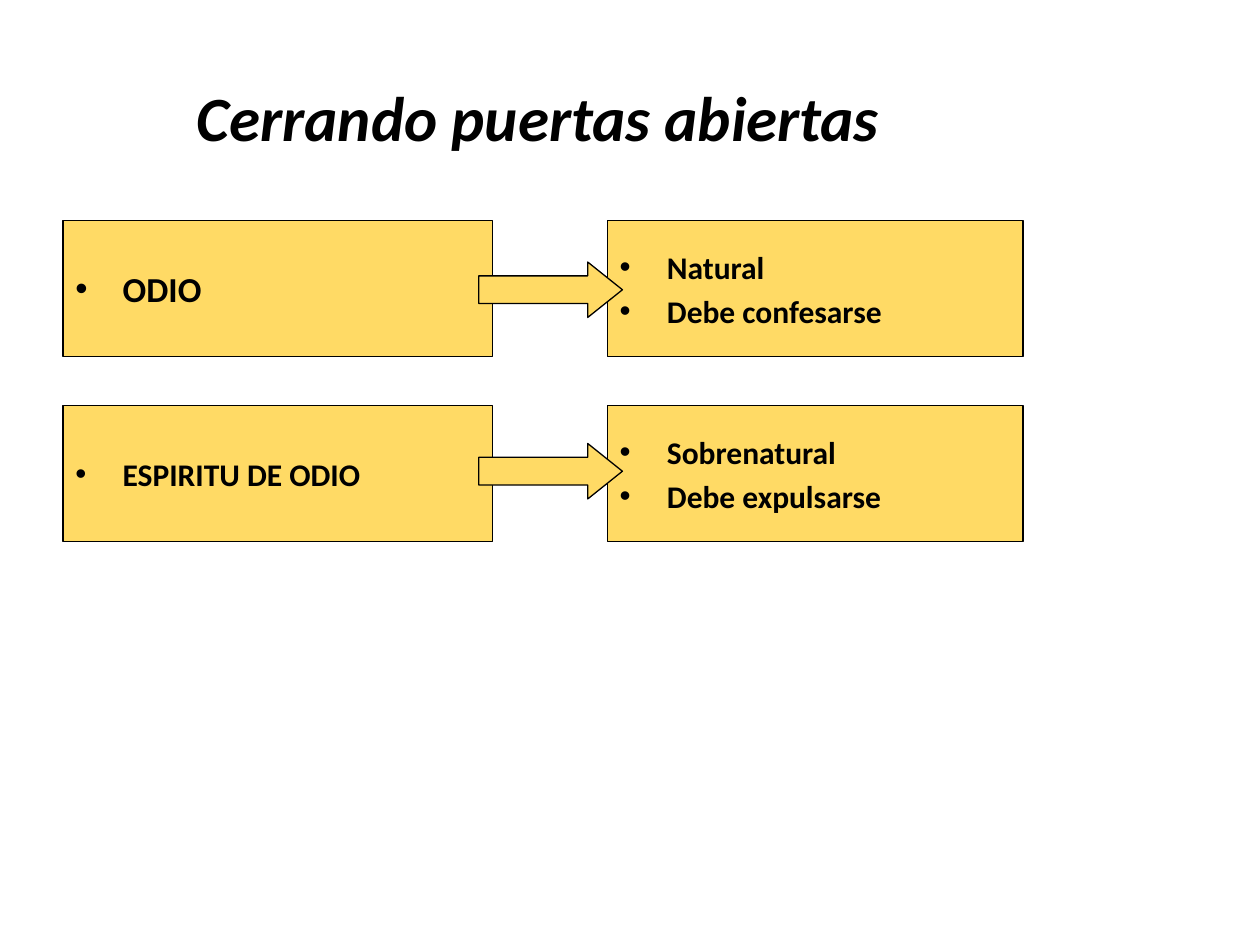
from dataclasses import dataclass

import pptx
import pptx.dml.color
import pptx.enum.shapes
import pptx.enum.text
import pptx.oxml.ns
import pptx.util
from lxml import etree
from pptx.util import Inches

BLACK = pptx.dml.color.RGBColor(0x00, 0x00, 0x00)
GOLD = pptx.dml.color.RGBColor(0xFF, 0xDA, 0x65)
Shape = pptx.enum.shapes.MSO_SHAPE
Align = pptx.enum.text.PP_ALIGN

CAUSE_LEFT, CAUSE_WIDTH = 0.5, 3.41
REMEDY_LEFT, REMEDY_WIDTH = 4.82, 3.3
BOX_HEIGHT = 1.08
ARROW_LEFT, ARROW_WIDTH, ARROW_HEIGHT = 3.8, 1.14, 0.44
BULLET_INDENT = 0.375


@dataclass
class Door:
    cause: str
    cause_size: int
    remedies: list[str]
    top: float
    arrow_top: float


DOORS = [
    Door("ODIO", 20, ["Natural", "Debe confesarse"], 1.75, 2.08),
    Door("ESPIRITU DE ODIO", 18, ["Sobrenatural", "Debe expulsarse"], 3.22, 3.52),
]


def set_font(para, size: int, italic: bool = False) -> None:
    values = {"name": "Calibri", "size": pptx.util.Pt(size), "bold": True, "italic": italic}
    for span in para.runs:
        for name, value in values.items():
            setattr(span.font, name, value)
        span.font.color.rgb = BLACK


def add_bullet(para) -> None:
    properties = para._p.get_or_add_pPr()
    properties.set("marL", str(Inches(BULLET_INDENT)))
    properties.set("indent", str(-Inches(BULLET_INDENT)))
    font = etree.SubElement(properties, pptx.oxml.ns.qn("a:buFont"))
    font.set("typeface", "Arial")
    bullet = etree.SubElement(properties, pptx.oxml.ns.qn("a:buChar"))
    bullet.set("char", "•")


def add_gold_shape(slide, kind, left: float, top: float, width: float, height: float):
    shape = slide.shapes.add_shape(
        kind, Inches(left), Inches(top), Inches(width), Inches(height))
    shape.shadow.inherit = False
    shape.fill.solid()
    shape.fill.fore_color.rgb = GOLD
    shape.line.color.rgb = BLACK
    shape.line.width = pptx.util.Pt(0.75)
    return shape


def add_list_box(slide, left: float, top: float, width: float,
                 items: list[str], size: int) -> None:
    box = add_gold_shape(slide, Shape.RECTANGLE, left, top, width, BOX_HEIGHT)
    frame = box.text_frame
    frame.word_wrap = True
    frame.vertical_anchor = pptx.enum.text.MSO_ANCHOR.MIDDLE
    for index, item in enumerate(items):
        para = frame.add_paragraph() if index else frame.paragraphs[0]
        add_bullet(para)
        para.alignment = Align.LEFT
        if index:
            para.space_before = pptx.util.Pt(3.5)
        para.add_run().text = item
        set_font(para, size)


def add_arrow(slide, top: float) -> None:
    arrow = add_gold_shape(
        slide, Shape.RIGHT_ARROW, ARROW_LEFT, top, ARROW_WIDTH, ARROW_HEIGHT)
    arrow.adjustments[0] = 0.5
    arrow.adjustments[1] = 0.625


def add_title(slide, text: str) -> None:
    box = slide.shapes.add_textbox(Inches(-0.23), Inches(0.3), Inches(9), Inches(1.25))
    frame = box.text_frame
    frame.word_wrap = True
    frame.vertical_anchor = pptx.enum.text.MSO_ANCHOR.MIDDLE
    para = frame.paragraphs[0]
    para.alignment = Align.CENTER
    para.add_run().text = text
    set_font(para, 36, italic=True)


def main() -> None:
    deck = pptx.Presentation()
    deck.slide_width, deck.slide_height = Inches(10), Inches(7.5)
    slide = deck.slides.add_slide(deck.slide_layouts[6])
    add_title(slide, "Cerrando puertas abiertas")
    for door in DOORS:
        add_list_box(slide, CAUSE_LEFT, door.top, CAUSE_WIDTH, [door.cause], door.cause_size)
        add_list_box(slide, REMEDY_LEFT, door.top, REMEDY_WIDTH, door.remedies, 18)
    for door in DOORS:
        add_arrow(slide, door.arrow_top)
    deck.save("out.pptx")


if __name__ == "__main__":
    main()
